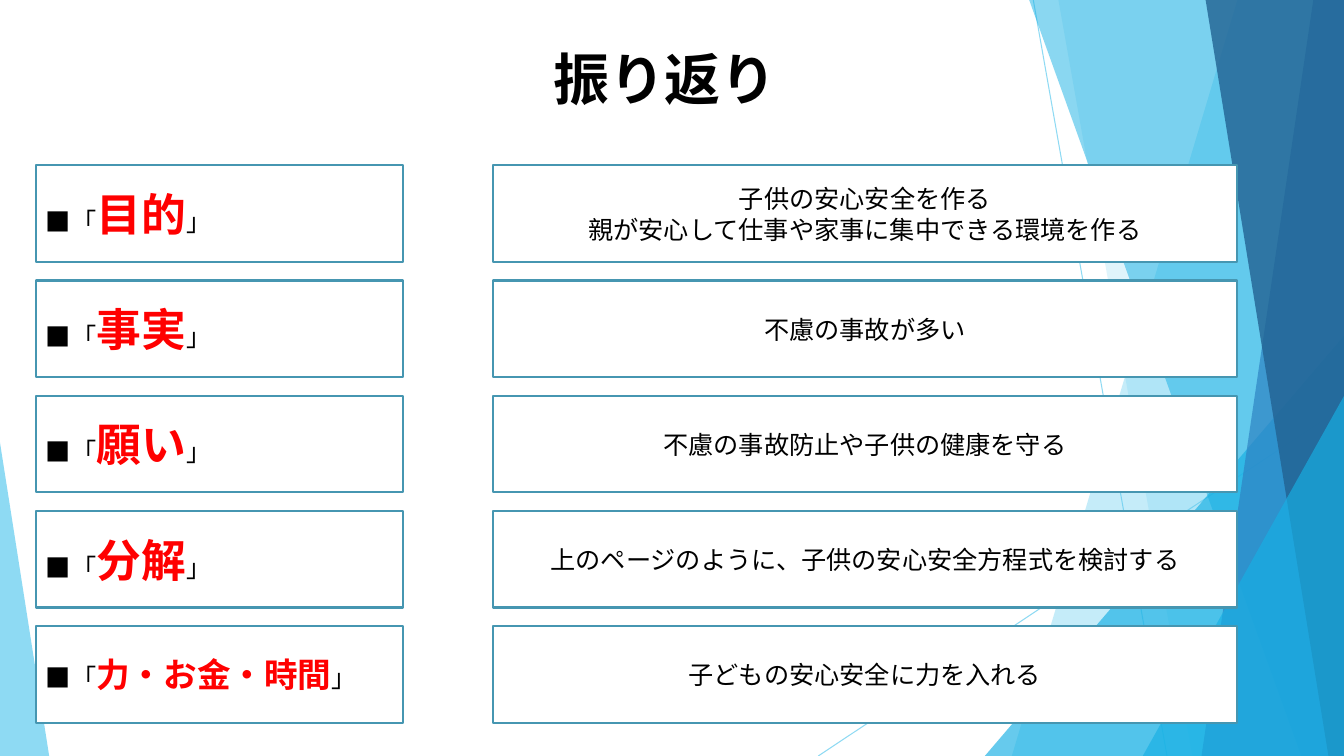
from lxml.etree import SubElement
from pptx import Presentation
from pptx.dml.color import RGBColor
from pptx.enum.shapes import MSO_CONNECTOR, MSO_SHAPE
from pptx.enum.text import MSO_ANCHOR, MSO_AUTO_SIZE, PP_ALIGN
from pptx.oxml.ns import qn
from pptx.util import Cm, Pt

COLOURS = {
    "sky": "5FCBEF", "cyan": "17B0E4", "blue": "2E83C3", "navy": "226292",
    "border": "4696B1", "white": "FFFFFF", "black": "000000", "red": "FF0000",
}
WIDTH, HEIGHT = 33.87, 19.05


def tint(drawn, colour_format, colour, opacity):
    colour_format.rgb = RGBColor.from_string(COLOURS[colour])
    for srgb in drawn._element.iter(qn("a:srgbClr")):
        SubElement(srgb, qn("a:alpha")).set("val", str(opacity * 1000))


def write(paragraph, words, size, colour="black", bold=False, face="Karla"):
    run = paragraph.add_run()
    run.text = words
    run.font.size = Pt(size)
    run.font.bold = bold
    run.font.name = face
    run.font.color.rgb = RGBColor.from_string(COLOURS[colour])
    SubElement(run.font._element, qn("a:ea")).set("typeface", face)


deck = Presentation()
deck.slide_width, deck.slide_height = Cm(WIDTH), Cm(HEIGHT)
slide = deck.slides.add_slide(deck.slide_layouts[6])
shapes = slide.shapes

for x1, y1, x2 in [(26.04, 0, 29.41), (WIDTH, 10.24, 20.62)]:
    ray = shapes.add_connector(
        MSO_CONNECTOR.STRAIGHT, Cm(x1), Cm(y1), Cm(x2), Cm(HEIGHT))
    ray.line.width = Pt(0.75)
    tint(ray, ray.line.color, "sky", 70)
    SubElement(ray._element.spPr, qn("a:effectLst"))

shards = [
    ("band", 31.19, 25.5, "sky", 36),
    ("band", 26.67, 30.05, "sky", 20),
    ("right", 24.82, 8.46, "cyan", 66),
    ("band", 25.93, 32.79, "cyan", 50),
    ("band", 33.1, 30.28, "blue", 70),
    ("band", 30.38, 33.48, "navy", 80),
    ("right", 28.8, 9.98, "cyan", 66),
    ("left", 1.24, 11.15, "sky", 70),
]
for kind, first, second, colour, opacity in shards:
    if kind == "band":
        outline = shapes.build_freeform(Cm(first), Cm(-0.02))
        outline.add_line_segments([
            (Cm(WIDTH), Cm(-0.02)), (Cm(WIDTH), Cm(HEIGHT)), (Cm(second), Cm(HEIGHT))])
        shard = outline.convert_to_shape()
    else:
        left, right = (first, WIDTH) if kind == "right" else (0, first)
        shard = shapes.add_shape(
            MSO_SHAPE.ISOSCELES_TRIANGLE,
            Cm(left), Cm(second), Cm(right - left), Cm(HEIGHT - second))
        shard.adjustments[0] = 1 if kind == "right" else 0
    shard.shadow.inherit = False
    shard.line.fill.background()
    shard.fill.solid()
    tint(shard, shard.fill.fore_color, colour, opacity)

reviews = [
    ("目的", 32, ["子供の安心安全を作る", "親が安心して仕事や家事に集中できる環境を作る"]),
    ("事実", 32, ["不慮の事故が多い"]),
    ("願い", 32, ["不慮の事故防止や子供の健康を守る"]),
    ("分解", 32, ["上のページのように、子供の安心安全方程式を検討する"]),
    ("力・お金・時間", 24, ["子どもの安心安全に力を入れる"]),
]
for row, (topic, topic_size, answers) in enumerate(reviews):
    top = Cm(4.17 + 2.9 * row)
    topic_box = shapes.add_shape(MSO_SHAPE.RECTANGLE, Cm(0.91), top, Cm(9.25), Cm(2.44))
    answer_box = shapes.add_shape(MSO_SHAPE.RECTANGLE, Cm(12.42), top, Cm(18.75), Cm(2.44))
    for box in (topic_box, answer_box):
        box.shadow.inherit = False
        box.fill.solid()
        box.fill.fore_color.rgb = RGBColor.from_string(COLOURS["white"])
        box.line.color.rgb = RGBColor.from_string(COLOURS["border"])
        box.line.width = Pt(1.5)
        box.text_frame.word_wrap = True
        box.text_frame.vertical_anchor = MSO_ANCHOR.MIDDLE

    heading = topic_box.text_frame.paragraphs[0]
    heading.alignment = PP_ALIGN.LEFT
    write(heading, "■「", 18)
    write(heading, topic, topic_size, "red", True)
    write(heading, "」", 18)

    for number, answer in enumerate(answers):
        frame = answer_box.text_frame
        line = frame.add_paragraph() if number else frame.paragraphs[0]
        line.alignment = PP_ALIGN.CENTER
        write(line, answer, 18)

title = shapes.add_textbox(Cm(13.69), Cm(0.99), Cm(6.5), Cm(1.96)).text_frame
title.word_wrap = True
title.auto_size = MSO_AUTO_SIZE.SHAPE_TO_FIT_TEXT
write(title.paragraphs[0], "振り返り", 40, bold=True, face="Noto Sans CJK JP")

deck.save("out.pptx")
